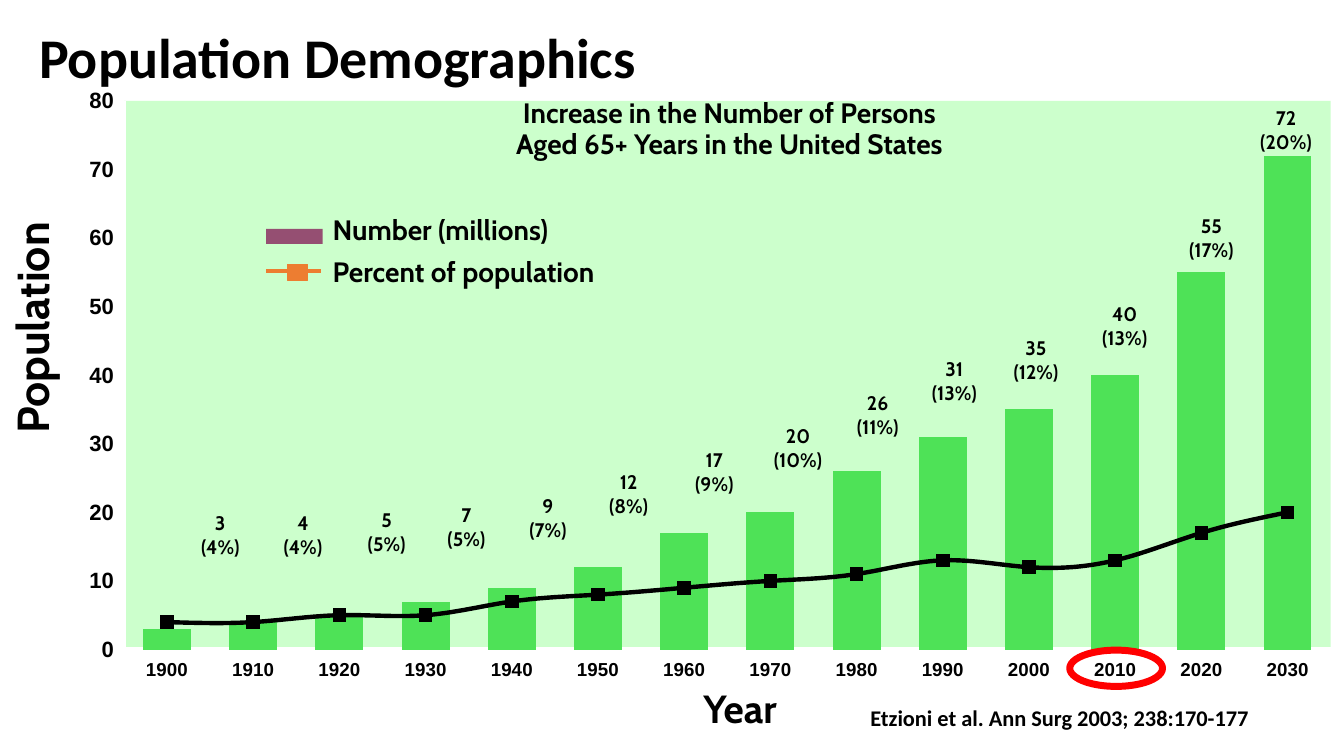
from lxml import etree
from pptx import Presentation
from pptx.chart.data import CategoryChartData
from pptx.dml.color import RGBColor
from pptx.enum.chart import XL_CHART_TYPE, XL_MARKER_STYLE, XL_TICK_MARK
from pptx.enum.shapes import MSO_CONNECTOR, MSO_SHAPE
from pptx.enum.text import MSO_ANCHOR, PP_ALIGN
from pptx.oxml import parse_xml
from pptx.oxml.ns import nsdecls, qn
from pptx.util import Inches, Pt

COLUMNS = XL_CHART_TYPE.COLUMN_CLUSTERED
SQUARE = XL_MARKER_STYLE.SQUARE
TICK_OUT, TICK_NONE = XL_TICK_MARK.OUTSIDE, XL_TICK_MARK.NONE
STRAIGHT = MSO_CONNECTOR.STRAIGHT
RECTANGLE, OVAL = MSO_SHAPE.RECTANGLE, MSO_SHAPE.OVAL
TOP, MIDDLE = MSO_ANCHOR.TOP, MSO_ANCHOR.MIDDLE
LEFT, CENTER = PP_ALIGN.LEFT, PP_ALIGN.CENTER

BLACK, WHITE, RED = "000000", "FFFFFF", "FF0000"
GREEN, PALE_GREEN = "4EE257", "CCFFCC"
ORANGE, PLUM = "ED7D31", "954F72"

# Year, millions aged 65+, percent of population, label left, label top
DECADES = [
    (1900, 3, 4, 1.61, 5.05),
    (1910, 4, 4, 2.43, 5.05),
    (1920, 5, 5, 3.26, 5.02),
    (1930, 7, 5, 4.05, 4.97),
    (1940, 9, 7, 4.86, 4.88),
    (1950, 12, 8, 5.66, 4.64),
    (1960, 17, 9, 6.51, 4.42),
    (1970, 20, 10, 7.34, 4.18),
    (1980, 26, 11, 8.13, 3.86),
    (1990, 31, 13, 8.89, 3.52),
    (2000, 35, 12, 9.7, 3.31),
    (2010, 40, 13, 10.58, 2.97),
    (2020, 55, 17, 11.44, 2.1),
    (2030, 72, 20, 12.18, 1.03),
]


def rgb(value):
    return RGBColor.from_string(value)


def inches(box):
    return [Inches(length) for length in box]


def paint(fill, color):
    fill.solid()
    fill.fore_color.rgb = rgb(color)


def style_font(font, size, name, color=BLACK):
    for key, value in {"size": Pt(size), "name": name, "bold": True}.items():
        setattr(font, key, value)
    paint(font.fill, color)


def add_text_shadow(run):
    effect = parse_xml(
        f'<a:effectLst {nsdecls("a")}><a:outerShdw dist="35921" dir="2700000">'
        '<a:srgbClr val="C0C0C0"/></a:outerShdw></a:effectLst>')
    run.font._element.find(qn("a:solidFill")).addnext(effect)


def add_text(slide, box, lines, size, name="Cabin", align=CENTER, anchor=TOP,
             line_spacing=1.0, before=0, rotation=0, shadow=False):
    textbox = slide.shapes.add_textbox(*inches(box))
    textbox.rotation = rotation
    frame = textbox.text_frame
    frame.word_wrap = True
    frame.vertical_anchor = anchor
    for index, line in enumerate(lines):
        paragraph = frame.paragraphs[0] if index == 0 else frame.add_paragraph()
        layout = {"alignment": align, "line_spacing": line_spacing,
                  "space_before": Pt(before)}
        for key, value in layout.items():
            setattr(paragraph, key, value)
        run = paragraph.add_run()
        run.text = line
        style_font(run.font, size, name)
        if shadow:
            add_text_shadow(run)


def add_shape(slide, kind, box, fill=None, line=None, width=0.75):
    shape = slide.shapes.add_shape(kind, *inches(box))
    shape.shadow.inherit = False
    if fill:
        paint(shape.fill, fill)
    else:
        shape.fill.background()
    if line:
        paint(shape.line.fill, line)
        shape.line.width = Pt(width)
    else:
        shape.line.fill.background()


def add_line(slide, start, end, color, width):
    line = slide.shapes.add_connector(STRAIGHT, *inches(start + end))
    paint(line.line.fill, color)
    line.line.width = Pt(width)
    etree.SubElement(line._element.spPr, qn("a:effectLst"))


def style_axis(axis, size):
    settings = {"has_major_gridlines": False, "major_tick_mark": TICK_OUT,
                "minor_tick_mark": TICK_NONE}
    for key, value in settings.items():
        setattr(axis, key, value)
    style_font(axis.tick_labels.font, size, "Arial")
    paint(axis.format.line.fill, WHITE)
    axis.format.line.width = Pt(3.15)


def move_last_series_to_line(chart):
    columns = chart._chartSpace.find(".//" + qn("c:barChart"))
    percent = columns.findall(qn("c:ser"))[-1]
    for bar_only in percent.findall(qn("c:invertIfNegative")):
        percent.remove(bar_only)
    axis_ids = "".join(f'<c:axId val="{axis.get("val")}"/>'
                       for axis in columns.findall(qn("c:axId")))
    lines = parse_xml(
        f'<c:lineChart {nsdecls("c")}><c:grouping val="standard"/>'
        f'<c:varyColors val="0"/><c:marker val="1"/>{axis_ids}</c:lineChart>')
    lines.insert(2, percent)
    columns.addnext(lines)


def format_plot_area(chart, x, y, width, height, color):
    area = chart._chartSpace.find(".//" + qn("c:plotArea"))
    for old in area.findall(qn("c:layout")):
        area.remove(old)
    area.insert(0, parse_xml(
        f'<c:layout {nsdecls("c")}><c:manualLayout><c:layoutTarget val="inner"/>'
        '<c:xMode val="edge"/><c:yMode val="edge"/>'
        f'<c:x val="{x}"/><c:y val="{y}"/><c:w val="{width}"/><c:h val="{height}"/>'
        '</c:manualLayout></c:layout>'))
    area.append(parse_xml(
        f'<c:spPr {nsdecls("c", "a")}><a:solidFill><a:srgbClr val="{color}"/>'
        '</a:solidFill><a:ln><a:noFill/></a:ln></c:spPr>'))


def add_population_chart(slide, box):
    years, millions, percents, _, _ = zip(*DECADES)
    data = CategoryChartData(number_format="0")
    data.categories = [str(year) for year in years]
    data.add_series("Number (millions)", millions)
    data.add_series("Percent of population", percents)
    chart = slide.shapes.add_chart(COLUMNS, *inches(box), data).chart
    chart.has_legend = False
    chart.has_title = False
    style_font(chart.font, 28, "Arial")

    style_axis(chart.category_axis, 13.4)
    style_axis(chart.value_axis, 15.8)
    scale = {"minimum_scale": 0, "maximum_scale": 80, "major_unit": 10}
    for key, value in scale.items():
        setattr(chart.value_axis, key, value)

    move_last_series_to_line(chart)
    format_plot_area(chart, 0.077, 0.027, 0.923, 0.915, PALE_GREEN)
    columns, lines = chart.plots
    columns.gap_width = 80
    columns.vary_by_categories = False
    paint(columns.series[0].format.fill, GREEN)
    percent = lines.series[0]
    percent.smooth = True
    paint(percent.format.line.fill, BLACK)
    percent.format.line.width = Pt(3.15)
    percent.marker.style = SQUARE
    percent.marker.size = 9
    paint(percent.marker.format.fill, BLACK)
    paint(percent.marker.format.line.fill, BLACK)


def add_legend(slide):
    add_line(slide, (2.64, 2.69), (3.18, 2.69), ORANGE, 3)
    add_shape(slide, RECTANGLE, (2.85, 2.62, 0.2, 0.16), ORANGE, ORANGE)
    add_shape(slide, RECTANGLE, (2.64, 2.27, 0.56, 0.15), PLUM)
    add_text(slide, (3.2, 2.1, 4.04, 0.85),
             ["Number (millions)", "Percent of population"], 20,
             align=LEFT, line_spacing=0.9, before=8)


def main():
    presentation = Presentation()
    presentation.slide_width = Inches(13.33)
    presentation.slide_height = Inches(7.5)
    slide = presentation.slides.add_slide(presentation.slide_layouts[6])

    # Source and title
    add_text(slide, (7.97, 6.92, 5.08, 0.4),
             ["Etzioni et al. Ann Surg 2003; 238:170-177"], 16, "Calibri",
             anchor=MIDDLE)
    add_text(slide, (0.29, 0, 11.5, 1.19), ["Population Demographics"], 40,
             "Calibri", align=LEFT, anchor=MIDDLE, line_spacing=0.9)

    # Chart with its headings
    add_population_chart(slide, (0.23, 0.84, 12.99, 5.95))
    add_text(slide, (2.53, 6.74, 9.62, 0.57), ["Year"], 28, shadow=True)
    add_text(slide, (-0.95, 2.91, 2.59, 0.69), ["Population"], 32,
             rotation=270, shadow=True)
    add_text(slide, (3.19, 0.94, 8.09, 0.71),
             ["Increase in the Number of Persons",
              "Aged 65+ Years in the United States"], 20,
             line_spacing=0.9, shadow=True)
    add_legend(slide)

    # Label of each decade
    for _, millions, percent, left, top in DECADES:
        add_text(slide, (left, top, 1.15, 0.61),
                 [str(millions), f"({percent}%)"], 14,
                 line_spacing=0.9, before=2)

    # Ring around 2010
    add_shape(slide, OVAL, (10.61, 6.45, 0.92, 0.36), line=RED, width=5)

    presentation.save("out.pptx")


if __name__ == "__main__":
    main()
